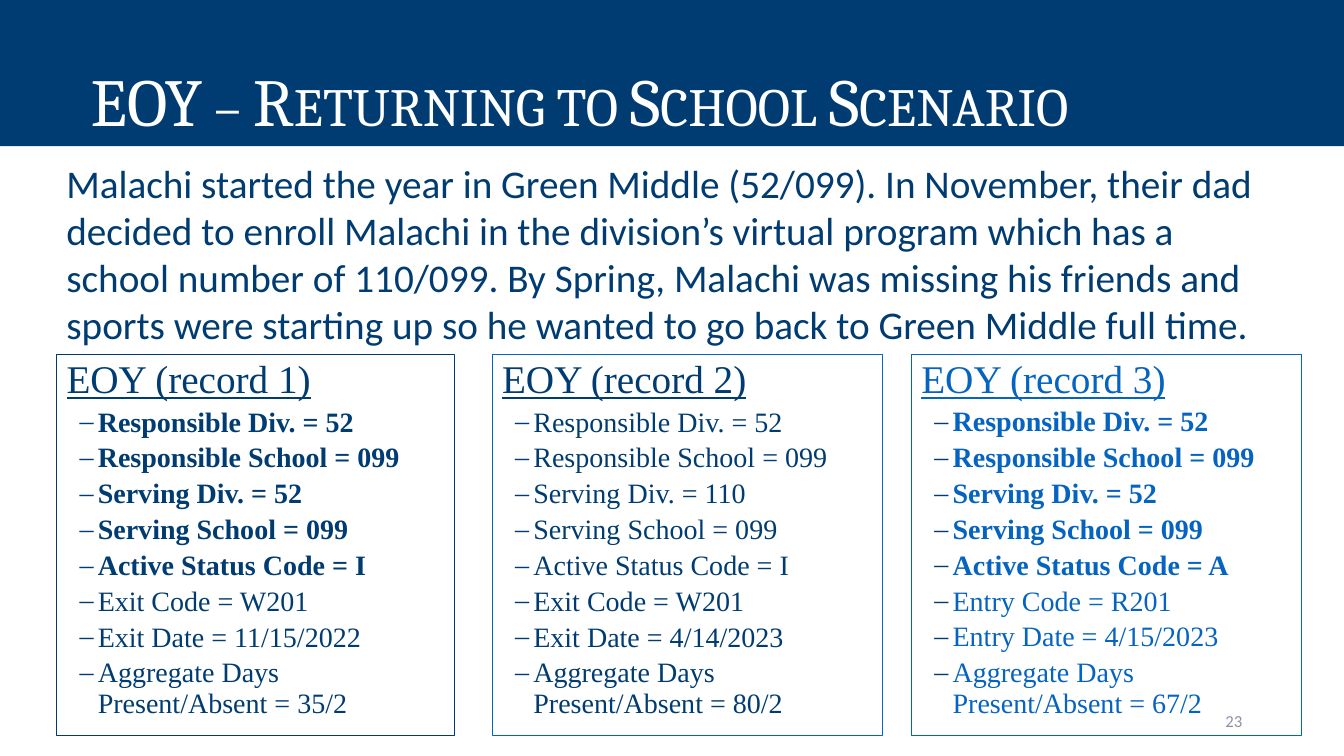
from lxml import etree
from pptx import Presentation
from pptx.dml.color import RGBColor
from pptx.enum.text import MSO_ANCHOR, MSO_AUTO_SIZE, PP_ALIGN
from pptx.oxml.ns import qn
from pptx.util import Inches, Pt

LEFT, RIGHT = PP_ALIGN.LEFT, PP_ALIGN.RIGHT
TOP, MIDDLE, BOTTOM = MSO_ANCHOR.TOP, MSO_ANCHOR.MIDDLE, MSO_ANCHOR.BOTTOM
NO_FIT = MSO_AUTO_SIZE.NONE
COLORS = {"navy": "003C71", "blue": "0563C1", "white": "FFFFFF", "gray": "8C92A5"}
SERIF = "Times New Roman"
STORY = (
    "Malachi started the year in Green Middle (52/099). In November, their dad "
    "decided to enroll Malachi in the division’s virtual program which has a "
    "school number of 110/099. By Spring, Malachi was missing his friends and "
    "sports were starting up so he wanted to go back to Green Middle full time."
)
BOLD_COUNT = 5
RECORDS = [
    dict(left=0.56, width=3.95, line="navy", color="navy", bold=True, div=52,
         status="I", move="Exit", code="W201", date="11/15/2022", days="35/2"),
    dict(left=4.88, width=3.87, line="blue", color="navy", bold=False, div=110,
         status="I", move="Exit", code="W201", date="4/14/2023", days="80/2"),
    dict(left=9.04, width=3.87, line="blue", color="blue", bold=True, div=52,
         status="A", move="Entry", code="R201", date="4/15/2023", days="67/2"),
]


def rgb(name):
    """Return the named colour."""
    return RGBColor.from_string(COLORS[name])


def place(sp, left, top, width, height, anchor=TOP):
    """Position a shape and prepare its text frame."""
    sp.left, sp.top = Inches(left), Inches(top)
    sp.width, sp.height = Inches(width), Inches(height)
    tf = sp.text_frame
    tf.word_wrap = True
    tf.auto_size = NO_FIT
    tf.vertical_anchor = anchor
    return tf


def write(p, text, size, font, color, bold=False, underline=False, align=LEFT):
    """Add a formatted run to a paragraph and return it."""
    p.alignment = align
    r = p.add_run()
    r.text = text
    r.font.size = Pt(size)
    r.font.name = font
    r.font.bold = bold
    r.font.underline = underline
    r.font.color.rgb = rgb(color)
    return r


def format_item(p, margin, indent, bullet=None):
    """Set spacing, hanging indent and bullet of a record paragraph."""
    p.line_spacing = 0.9
    pPr = p._p.get_or_add_pPr()
    pPr.set("marL", str(Inches(margin)))
    pPr.set("indent", str(Inches(indent)))
    before = etree.SubElement(pPr, qn("a:spcBef"))
    etree.SubElement(before, qn("a:spcPct"), val="20000")
    if bullet:
        color = etree.SubElement(pPr, qn("a:buClr"))
        etree.SubElement(color, qn("a:srgbClr"), val=COLORS["navy"])
        etree.SubElement(pPr, qn("a:buFont"), typeface=SERIF)
        etree.SubElement(pPr, qn("a:buChar"), char=bullet)
    else:
        etree.SubElement(pPr, qn("a:buNone"))


def add_title(sp, text):
    """Format the title placeholder as a full-width banner."""
    tf = place(sp, 0, 0, 13.33, 1.45, BOTTOM)
    tf.margin_left = Inches(0.9)
    sp.fill.solid()
    sp.fill.fore_color.rgb = rgb("navy")
    p = tf.paragraphs[0]
    p.line_spacing = 0.9
    r = write(p, text, 48, "Cambria", "white")
    r.font._element.set("cap", "small")


def add_text(s, text, box, size, color, **kwargs):
    """Add a plain text box."""
    anchor = kwargs.pop("anchor", TOP)
    tf = place(s.shapes.add_textbox(0, 0, 0, 0), *box, anchor)
    write(tf.paragraphs[0], text, size, "Calibri", color, **kwargs)


def fill_record(sp, number, rec):
    """Write one outlined record with its heading and dashed list."""
    tf = place(sp, rec["left"], 3.52, rec["width"], 3.78)
    sp.line.color.rgb = rgb(rec["line"])
    sp.line.width = Pt(0.75)
    p = tf.paragraphs[0]
    format_item(p, 0.25, -0.25)
    write(p, f"EOY (record {number})", 28, SERIF, rec["color"], underline=True)
    items = [
        "Responsible Div. = 52",
        "Responsible School = 099",
        f"Serving Div. = {rec['div']}",
        "Serving School = 099",
        f"Active Status Code = {rec['status']}",
        f"{rec['move']} Code = {rec['code']}",
        f"{rec['move']} Date = {rec['date']}",
        f"Aggregate Days Present/Absent = {rec['days']}",
    ]
    for i, item in enumerate(items):
        p = tf.add_paragraph()
        p.level = 1
        format_item(p, 0.31, -0.18, "–")
        write(p, item, 20, SERIF, rec["color"], bold=rec["bold"] and i < BOLD_COUNT)


def main():
    """Build and save the slide."""
    prs = Presentation()
    prs.slide_width, prs.slide_height = Inches(13.33), Inches(7.5)
    s = prs.slides.add_slide(prs.slide_layouts[3])
    add_title(s.shapes.title, "EOY – Returning to School Scenario")
    add_text(s, "23", (9.42, 6.95, 3, 0.4), 12, "gray", anchor=MIDDLE, align=RIGHT)
    add_text(s, STORY, (0.56, 1.53, 12.22, 1.99), 28, "navy")
    boxes = [s.placeholders[1], s.placeholders[2], s.shapes.add_textbox(0, 0, 0, 0)]
    for number, (sp, rec) in enumerate(zip(boxes, RECORDS), 1):
        fill_record(sp, number, rec)
    prs.save("out.pptx")


if __name__ == "__main__":
    main()
